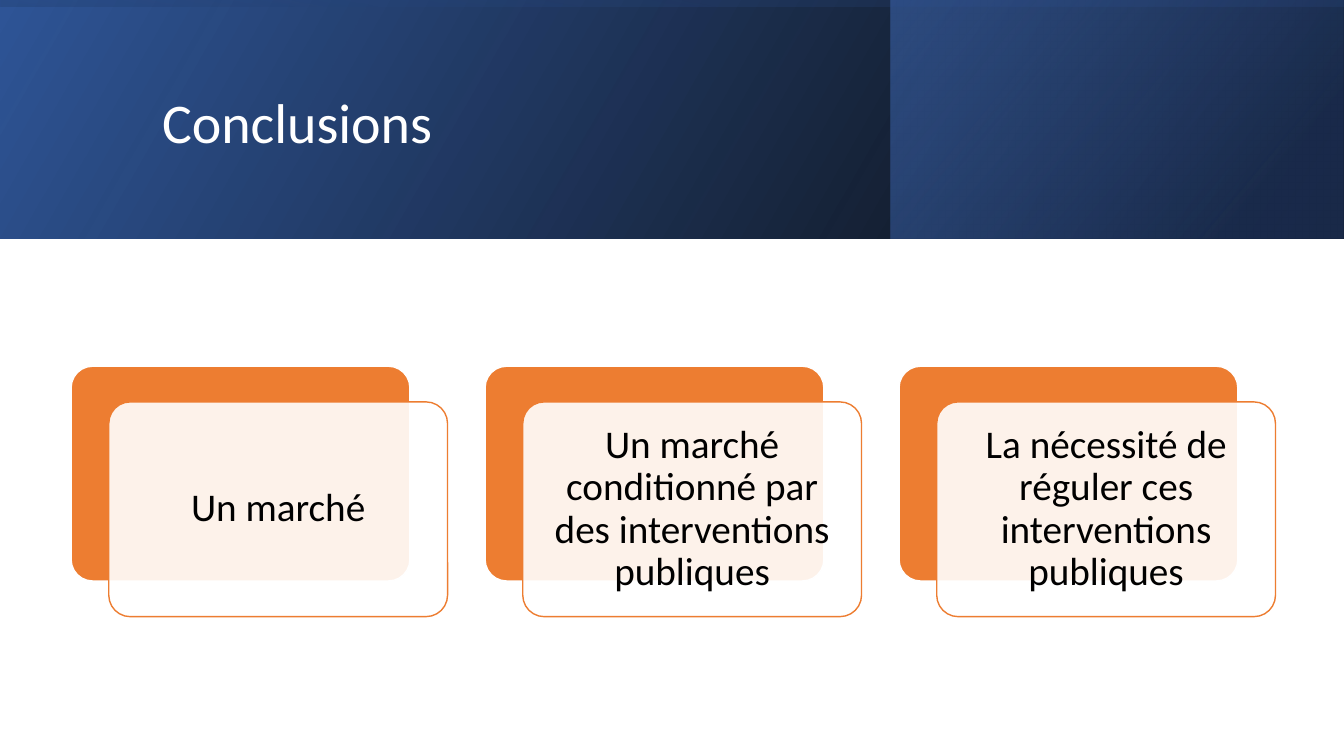
import pptx
import pptx.util
import pptx.dml.color
import pptx.enum.shapes
import pptx.enum.text
import pptx.oxml
import pptx.oxml.ns

Pt = pptx.util.Pt
Color = pptx.dml.color.RGBColor
Kind = pptx.enum.shapes.MSO_SHAPE
Align = pptx.enum.text.PP_ALIGN
Anchor = pptx.enum.text.MSO_ANCHOR

WHITE = Color(0xFF, 0xFF, 0xFF)
BLACK = Color(0x00, 0x00, 0x00)
ORANGE = Color(0xED, 0x7D, 0x31)
BLUE = Color(0x2F, 0x55, 0x97)
NAVY = Color(0x20, 0x38, 0x64)
SKY = Color(0x44, 0x72, 0xC4)
FONT = "Calibri"
WIDTH, HEIGHT = 960, 540
BAND = 170.64


def add_box(kind, left, top, width, height):
    box = slide.shapes.add_shape(kind, Pt(left), Pt(top), Pt(width), Pt(height))
    box.shadow.inherit = False
    return box


def add_text(frame, text, size, color, align):
    """Write one middle-anchored paragraph into a text frame."""
    frame.word_wrap = True
    frame.vertical_anchor = Anchor.MIDDLE
    para = frame.paragraphs[0]
    para.alignment = align
    para.line_spacing = 0.9
    run = para.add_run()
    run.text = text
    run.font.name = FONT
    run.font.size = Pt(size)
    run.font.color.rgb = color


deck = pptx.Presentation()
deck.slide_width, deck.slide_height = Pt(WIDTH), Pt(HEIGHT)
slide = deck.slides.add_slide(deck.slide_layouts[6])

# Header: left, top, width, height, turn, gradient angle, stops (place, colour, opacity)
side = (WIDTH - BAND) / 2
bands = [
    (0, 0, WIDTH, BAND, 0, 330, [(0, BLACK, 96), (100, BLUE, 100)]),
    (636.3, 0, 323, BAND, 0, 320, [(19, NAVY, 68), (100, SKY, 48)]),
    (side, -side, BAND, WIDTH, 270, 350, [(23, BLUE, 16), (99, BLACK, 45)]),
]
for left, top, width, height, turn, angle, stops in bands:
    band = add_box(Kind.RECTANGLE, left, top, width, height)
    band.rotation = turn
    band.line.fill.background()
    marks = "".join(
        f'<a:gs pos="{place * 1000}"><a:srgbClr val="{color}">'
        f'<a:alpha val="{alpha * 1000}"/></a:srgbClr></a:gs>'
        for place, color, alpha in stops
    )
    fill = pptx.oxml.parse_xml(
        f'<a:gradFill {pptx.oxml.ns.nsdecls("a")} rotWithShape="1"><a:gsLst>{marks}</a:gsLst>'
        f'<a:lin ang="{angle * 60000}" scaled="0"/></a:gradFill>'
    )
    props = band._element.spPr
    props.xfrm.set("flipH", "1")
    props.find(pptx.oxml.ns.qn("a:prstGeom")).addnext(fill)

title = slide.shapes.add_textbox(Pt(108.7), Pt(27.4), Pt(765.4), Pt(123.8))
add_text(title.text_frame, "Conclusions", 40, WHITE, Align.LEFT)

# Cards: an orange plate with a translucent white card in front
points = [
    "Un marché",
    "Un marché conditionné par des interventions publiques",
    "La nécessité de réguler ces interventions publiques",
]
for index, point in enumerate(points):
    left, top = 50.8 + index * 295.7, 261.6
    plate = add_box(Kind.ROUNDED_RECTANGLE, left, top, 242, 153.4)
    card = add_box(Kind.ROUNDED_RECTANGLE, left + 26.9, top + 25.5, 242, 153.4)
    for box, fill, edge in ((plate, ORANGE, WHITE), (card, WHITE, ORANGE)):
        box.adjustments[0] = 0.1
        box.fill.solid()
        box.fill.fore_color.rgb = fill
        box.line.color.rgb = edge
        box.line.width = Pt(1)
    tint = card._element.spPr.find(pptx.oxml.ns.qn("a:solidFill"))[0]
    tint.append(pptx.oxml.parse_xml(f'<a:alpha {pptx.oxml.ns.nsdecls("a")} val="90000"/>'))
    frame = card.text_frame
    frame.margin_left = frame.margin_right = Pt(8.5)
    frame.margin_top = frame.margin_bottom = Pt(8.5)
    add_text(frame, point, 28, BLACK, Align.CENTER)

deck.save("out.pptx")
